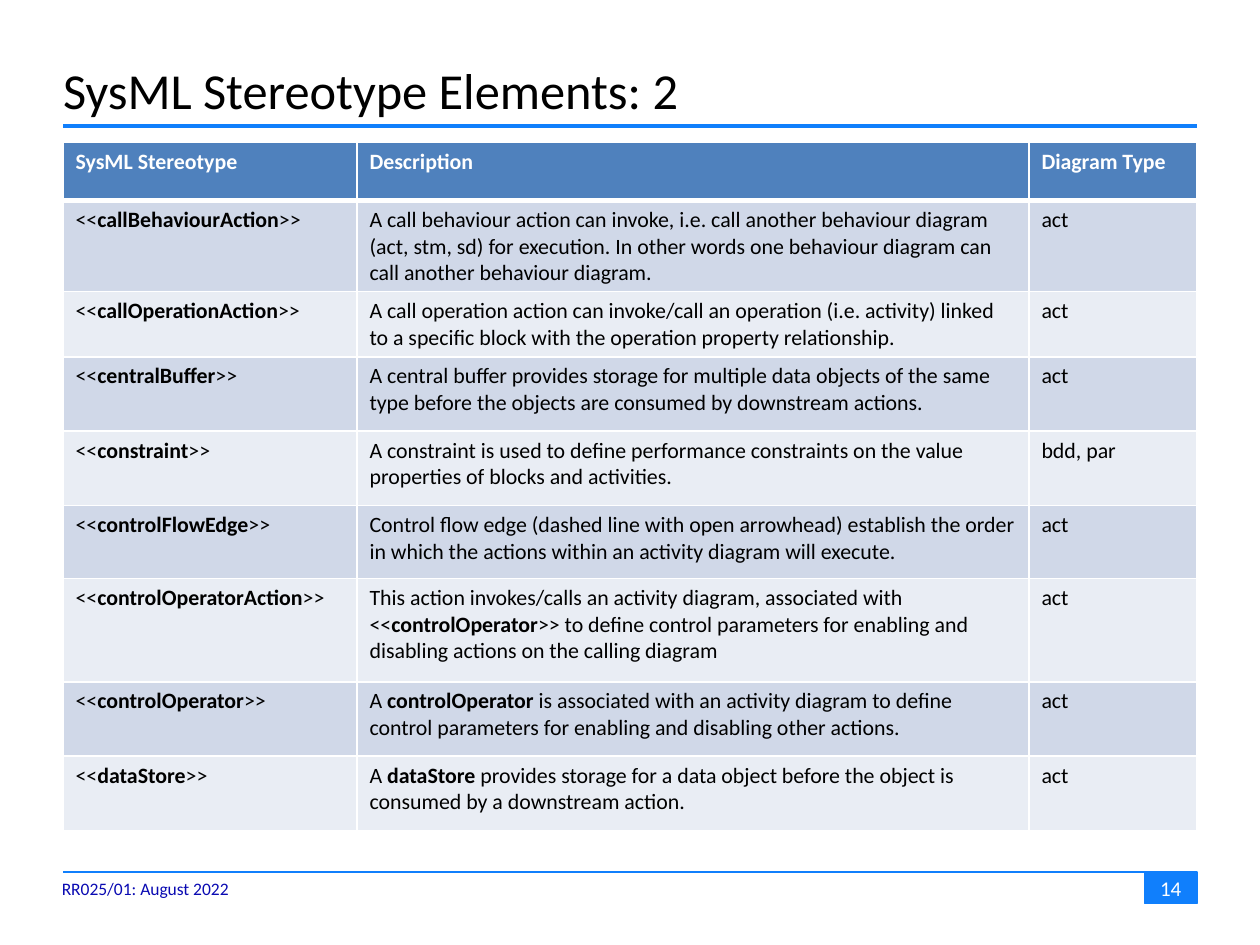
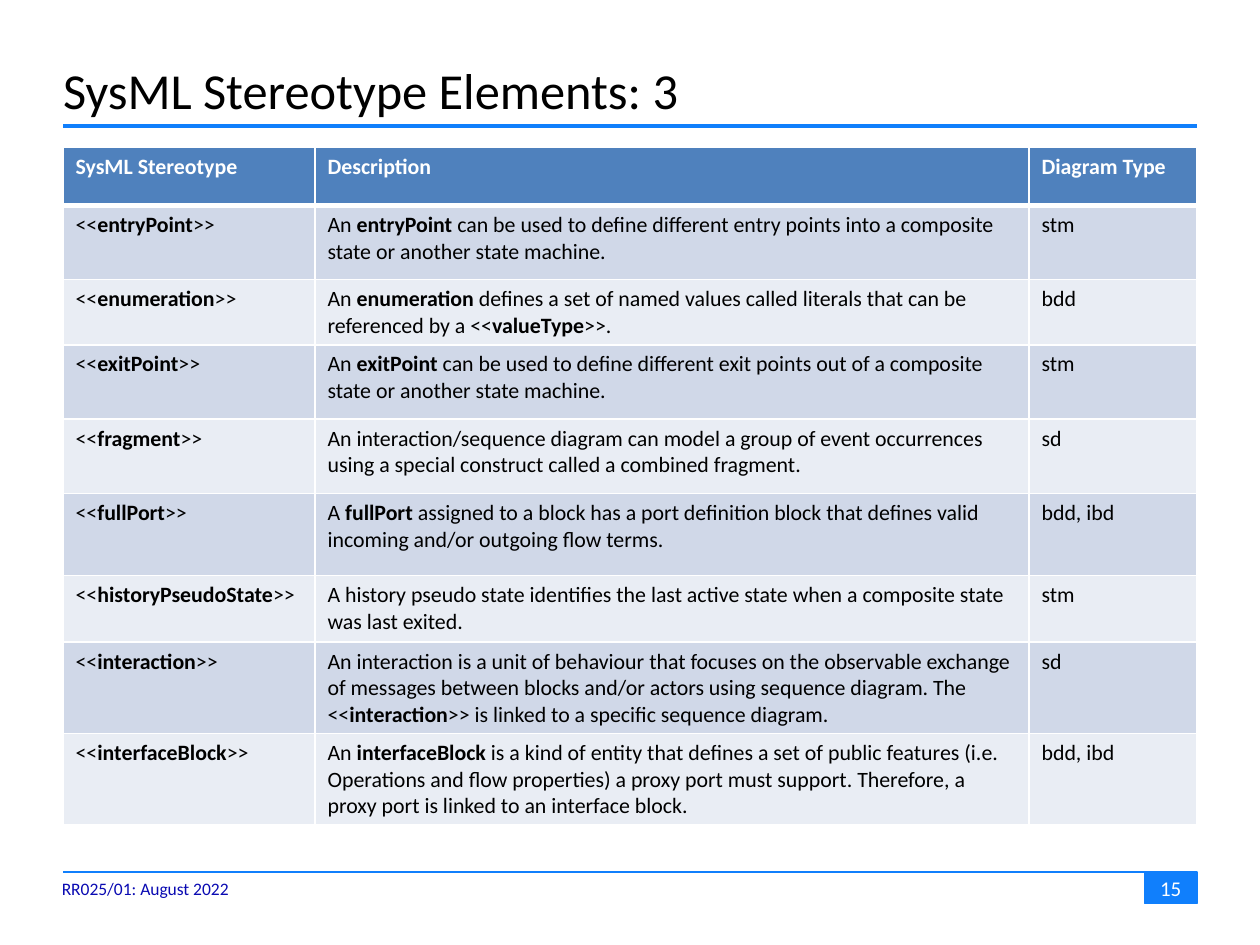
from dataclasses import dataclass

from lxml.etree import SubElement
from pptx import Presentation
from pptx.dml.color import RGBColor as RGB
from pptx.enum.shapes import MSO_CONNECTOR as CONN, MSO_SHAPE as SHAPE
from pptx.enum.text import MSO_ANCHOR as ANCHOR, MSO_AUTO_SIZE as AUTO, PP_ALIGN as ALIGN
from pptx.oxml import parse_xml
from pptx.oxml.ns import nsdecls, qn
from pptx.util import Inches, Pt

W, H = Inches(10), Inches(7.5)
MARGIN, FULL = 3, 54
RULE_ROW, FOOTER_ROW = 100, 692


@dataclass(frozen=True)
class Theme:
    font: str = "Calibri"
    accent: str = "107FFC"
    header: str = "4F81BD"
    bands: tuple[str, str] = ("D0D8E8", "E9EDF4")
    white: str = "FFFFFF"
    ink: str = "000000"
    footer: str = "0A0AB2"
    title_pt: float = 28.8
    table_pt: float = 12.5
    number_pt: float = 12
    footer_pt: float = 10


@dataclass(frozen=True)
class Row:
    stereotype: str
    description: str
    diagrams: str
    height: int = 59


@dataclass(frozen=True)
class Page:
    number: int
    title: str
    top: int
    cols: tuple[int, int, int]
    rows: tuple[Row, ...]


THEME = Theme()
HEADER = Row("SysML Stereotype", "Description", "Diagram Type", 46)

PAGES = (
    Page(14, "SysML Stereotype Elements: 2", 113, (14, 32, 8), (
        Row("callBehaviourAction", "A call behaviour action can invoke, i.e. call another "
            "behaviour diagram (act, stm, sd) for execution. In other words one behaviour "
            "diagram can call another behaviour diagram.", "act"),
        Row("callOperationAction", "A call operation action can invoke/call an operation "
            "(i.e. activity) linked to a specific block with the operation property "
            "relationship.", "act", 46),
        Row("centralBuffer", "A central buffer provides storage for multiple data objects of "
            "the same type before the objects are consumed by downstream actions.", "act"),
        Row("constraint", "A constraint is used to define performance constraints on the "
            "value properties of blocks and activities.", "bdd, par"),
        Row("controlFlowEdge", "Control flow edge (dashed line with open arrowhead) establish "
            "the order in which the actions within an activity diagram will execute.",
            "act", 58),
        Row("controlOperatorAction", "This action invokes/calls an activity diagram, "
            "associated with <<*controlOperator*>> to define control parameters for enabling "
            "and disabling actions on the calling diagram", "act", 82),
        Row("controlOperator", "A *controlOperator* is associated with an activity diagram to "
            "define control parameters for enabling and disabling other actions.", "act"),
        Row("dataStore", "A *dataStore* provides storage for a data object before the object "
            "is consumed by a downstream action.", "act"),
    )),
    Page(15, "SysML Stereotype Elements: 3", 117, (12, 34, 8), (
        Row("entryPoint", "An *entryPoint* can be used to define different entry points into "
            "a composite state or another state machine.", "stm"),
        Row("enumeration", "An *enumeration* defines a set of named values called literals "
            "that can be referenced by a <<*valueType*>>.", "bdd", 46),
        Row("exitPoint", "An *exitPoint* can be used to define different exit points out of "
            "a composite state or another state machine.", "stm"),
        Row("fragment", "An interaction/sequence diagram can model a group of event "
            "occurrences using a special construct called a combined fragment.", "sd"),
        Row("fullPort", "A *fullPort* assigned to a block has a port definition block that "
            "defines valid incoming and/or outgoing flow terms.", "bdd, ibd", 65),
        Row("historyPseudoState", "A history pseudo state identifies the last active state "
            "when a composite state was last exited.", "stm", 53),
        Row("interaction", "An interaction is a unit of behaviour that focuses on the "
            "observable exchange of messages between blocks and/or actors using sequence "
            "diagram. The <<*interaction*>> is linked to a specific sequence diagram.", "sd"),
        Row("interfaceBlock", "An *interfaceBlock* is a kind of entity that defines a set of "
            "public features (i.e. Operations and flow properties) a proxy port must support. "
            "Therefore, a proxy port is linked to an interface block.", "bdd, ibd"),
    )),
)


def x(cols: float) -> int:
    return round(W * cols / 60)


def y(rows: float) -> int:
    return round(H * rows / 750)


def write(tf, text: str, *, size: float, color: str, bold: bool = False,
          align=ALIGN.LEFT) -> None:
    p = tf.paragraphs[0]
    p.alignment = align
    for i, part in enumerate(text.split("*")):
        if part:
            r = p.add_run()
            r.text = part
            r.font.name = THEME.font
            r.font.size = Pt(size)
            r.font.bold = bold or i % 2 == 1
            r.font.color.rgb = RGB.from_string(color)


def frame(tf, *, left: float = 0.1, right: float = 0.1, anchor=ANCHOR.TOP,
          wrap: bool = True, fit=AUTO.NONE) -> None:
    tf.margin_left, tf.margin_right = Inches(left), Inches(right)
    tf.margin_top = tf.margin_bottom = Inches(0.05)
    tf.vertical_anchor, tf.word_wrap, tf.auto_size = anchor, wrap, fit


def add_rule(slide, row: int, weight: float) -> None:
    cx = slide.shapes.add_connector(CONN.STRAIGHT, x(MARGIN), y(row), x(MARGIN + FULL), y(row))
    cx.line.color.rgb = RGB.from_string(THEME.accent)
    cx.line.width = Pt(weight)
    SubElement(cx._element.spPr, qn("a:effectLst"))


def add_furniture(slide, page: Page) -> None:
    add_rule(slide, RULE_ROW, 2)
    add_rule(slide, FOOTER_ROW, 1)

    sp = slide.shapes.add_shape(SHAPE.RECTANGLE, x(54.5), y(FOOTER_ROW), x(2.5), y(25))
    sp.shadow.inherit = False
    sp.fill.solid()
    sp.fill.fore_color.rgb = sp.line.color.rgb = RGB.from_string(THEME.accent)
    sp.line.width = Pt(1)
    frame(sp.text_frame, anchor=ANCHOR.MIDDLE)
    write(sp.text_frame, str(page.number), size=THEME.number_pt, color=THEME.white,
          align=ALIGN.CENTER)

    tb = slide.shapes.add_textbox(x(2.94), y(FOOTER_ROW), x(8.7), y(27))
    frame(tb.text_frame, left=0, wrap=False, fit=AUTO.SHAPE_TO_FIT_TEXT)
    write(tb.text_frame, "RR025/01: August 2022", size=THEME.footer_pt, color=THEME.footer)

    title = slide.shapes.title
    title.left, title.top, title.width, title.height = x(MARGIN), y(42), x(FULL), y(58)
    frame(title.text_frame, left=0, right=0, anchor=ANCHOR.MIDDLE)
    write(title.text_frame, page.title, size=THEME.title_pt, color=THEME.ink)


def set_borders(cell, top: float, bottom: float) -> None:
    tcPr = cell._tc.get_or_add_tcPr()
    weights = {"lnL": 1, "lnR": 1, "lnT": top, "lnB": bottom}
    for i, (tag, weight) in enumerate(weights.items()):
        tcPr.insert(i, parse_xml(
            f'<a:{tag} {nsdecls("a")} w="{Pt(weight)}"><a:solidFill>'
            f'<a:srgbClr val="{THEME.white}"/></a:solidFill></a:{tag}>'))


def add_stereotypes(slide, page: Page) -> None:
    rows = (HEADER, *page.rows)
    table = slide.shapes.add_table(len(rows), len(page.cols), x(MARGIN), y(page.top), x(FULL),
                                   y(sum(row.height for row in rows))).table
    for col, width in zip(table.columns, page.cols):
        col.width = x(width)
    for i, row in enumerate(rows):
        table.rows[i].height = y(row.height)
        head = i == 0
        name = row.stereotype if head else f"<<*{row.stereotype}*>>"
        fill = THEME.header if head else THEME.bands[(i - 1) % 2]
        for cell, text in zip(table.rows[i].cells, (name, row.description, row.diagrams)):
            cell.fill.solid()
            cell.fill.fore_color.rgb = RGB.from_string(fill)
            set_borders(cell, top=3 if i == 1 else 1, bottom=3 if head else 1)
            write(cell.text_frame, text, size=THEME.table_pt, bold=head,
                  color=THEME.white if head else THEME.ink)


def main() -> None:
    prs = Presentation()
    prs.slide_width, prs.slide_height = W, H
    layout = prs.slide_layouts.get_by_name("Title Only")
    for page in PAGES:
        slide = prs.slides.add_slide(layout)
        add_furniture(slide, page)
        add_stereotypes(slide, page)
    prs.save("out.pptx")


if __name__ == "__main__":
    main()
